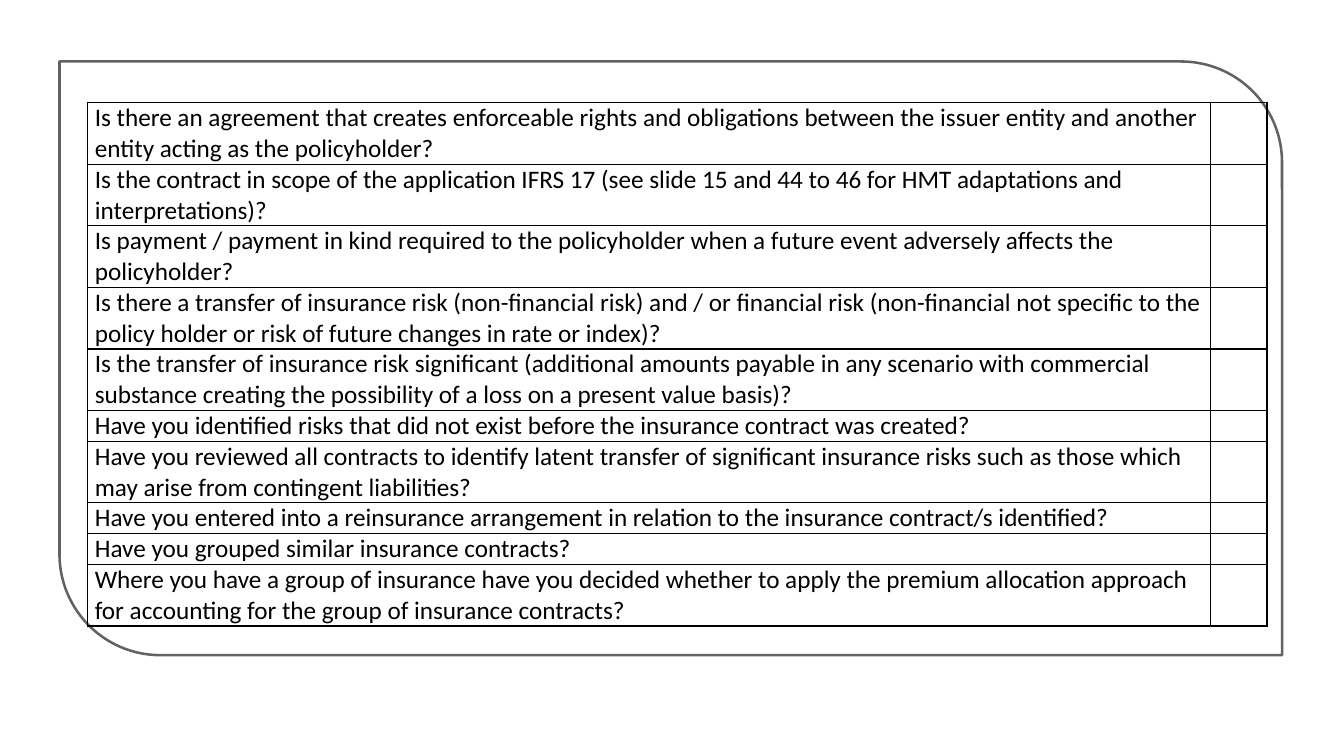
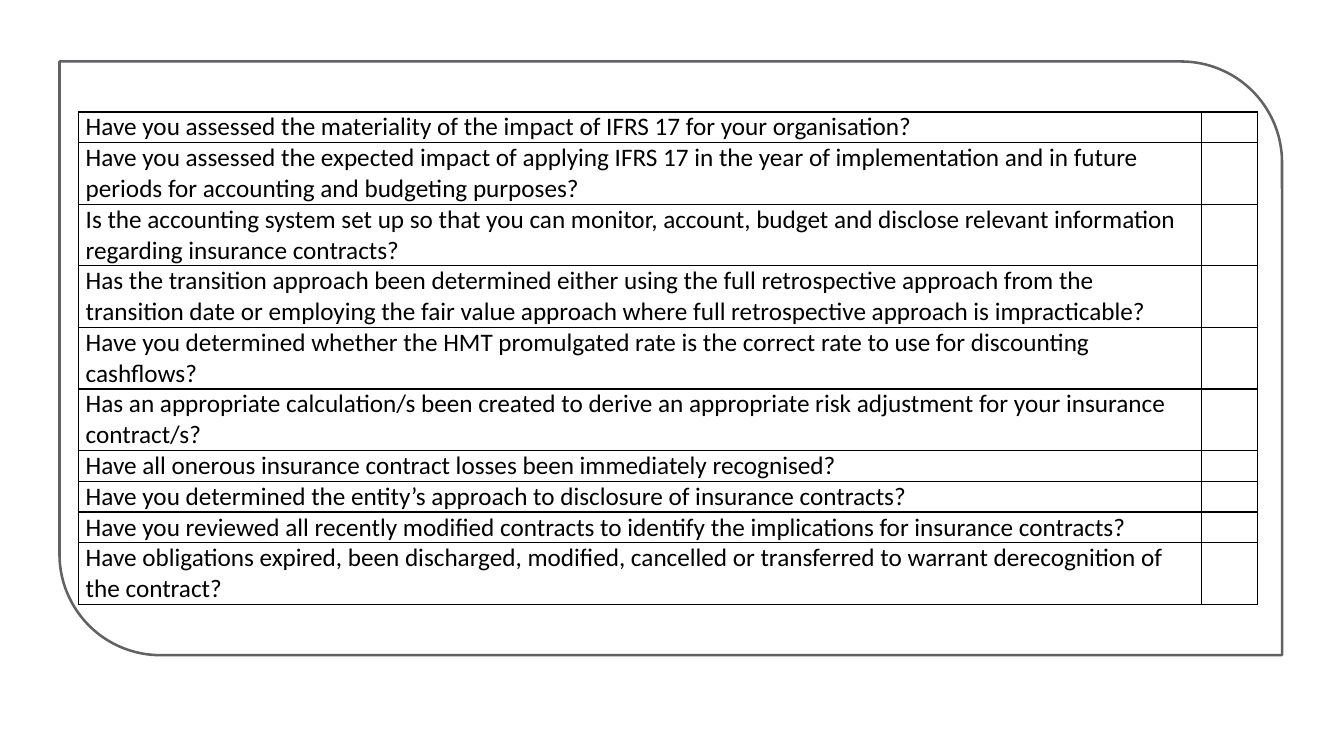
from lxml.etree import SubElement
from pptx import Presentation
from pptx.dml.color import RGBColor
from pptx.enum.shapes import MSO_SHAPE
from pptx.oxml.ns import qn
from pptx.util import Cm, Pt

# Content: table left, table top (cm), questions
LISTS = [
    (2.21, 2.59, [
        "Is there an agreement that creates enforceable rights and obligations between the issuer entity and another entity acting as the policyholder?",
        "Is the contract in scope of the application IFRS 17 (see slide 15 and 44 to 46 for HMT adaptations and interpretations)?",
        "Is payment / payment in kind required to the policyholder when a future event adversely affects the policyholder?",
        "Is there a transfer of insurance risk (non-financial risk) and / or financial risk (non-financial not specific to the policy holder or risk of future changes in rate or index)?",
        "Is the transfer of insurance risk significant (additional amounts payable in any scenario with commercial substance creating the possibility of a loss on a present value basis)?",
        "Have you identified risks that did not exist before the insurance contract was created?",
        "Have you reviewed all contracts to identify latent transfer of significant insurance risks such as those which may arise from contingent liabilities?",
        "Have you entered into a reinsurance arrangement in relation to the insurance contract/s identified?",
        "Have you grouped similar insurance contracts?",
        "Where you have a group of insurance have you decided whether to apply the premium allocation approach for accounting for the group of insurance contracts?",
    ]),
    (1.98, 2.82, [
        "Have you assessed the materiality of the impact of IFRS 17 for your organisation?",
        "Have you assessed the expected impact of applying IFRS 17 in the year of implementation and in future periods for accounting and budgeting purposes?",
        "Is the accounting system set up so that you can monitor, account, budget and disclose relevant information regarding insurance contracts?",
        "Has the transition approach been determined either using the full retrospective approach from the transition date or employing the fair value approach where full retrospective approach is impracticable?",
        "Have you determined whether the HMT promulgated rate is the correct rate to use for discounting cashflows?",
        "Has an appropriate calculation/s been created to derive an appropriate risk adjustment for your insurance contract/s?",
        "Have all onerous insurance contract losses been immediately recognised?",
        "Have you determined the entity’s approach to disclosure of insurance contracts?",
        "Have you reviewed all recently modified contracts to identify the implications for insurance contracts?",
        "Have obligations expired, been discharged, modified, cancelled or transferred to warrant derecognition of the contract?",
    ]),
]

# Shared style
FONT, SIZE = "Calibri", 18
INK, GREY = "000000", "616265"
COLS = (28.3, 1.42)
LINE = 0.77   # height of one text line, cm
FIT = 104     # characters that fit on one line


def color(code):
    return RGBColor.from_string(code)


def add_frame(slide):
    frame = slide.shapes.add_shape(MSO_SHAPE.ROUND_2_DIAG_RECTANGLE,
                                   Cm(1.5), Cm(1.55), Cm(30.81), Cm(14.96))
    frame.adjustments[0], frame.adjustments[1] = 0, 0.17
    frame.shadow.inherit = False
    frame.fill.background()
    frame.line.color.rgb = color(GREY)
    frame.line.width = Pt(1.8)


def style_cell(cell):
    cell.margin_left = cell.margin_right = Cm(0.18)
    cell.margin_top = cell.margin_bottom = 0
    props = cell._tc.get_or_add_tcPr()
    for side in ("lnL", "lnR", "lnT", "lnB"):
        edge = SubElement(props, qn(f"a:{side}"), w=str(Pt(1)))
        fill = SubElement(edge, qn("a:solidFill"))
        SubElement(fill, qn("a:srgbClr"), val=INK)
    cell.fill.background()


def add_list(slide, left, top, items):
    lines = [2 if len(item) > FIT else 1 for item in items]
    table = slide.shapes.add_table(len(items), len(COLS), Cm(left), Cm(top),
                                   Cm(sum(COLS)), Cm(LINE * sum(lines))).table
    table.first_row = table.horz_banding = False
    for col, width in zip(table.columns, COLS):
        col.width = Cm(width)
    for row, item, count in zip(table.rows, items, lines):
        row.height = Cm(LINE * count)
        for cell in row.cells:
            style_cell(cell)
        para = row.cells[0].text_frame.paragraphs[0]
        para.text = item
        font = para.runs[0].font
        font.name, font.size = FONT, Pt(SIZE)
        font.color.rgb = color(INK)


def main():
    deck = Presentation()
    deck.slide_width, deck.slide_height = Cm(33.87), Cm(19.05)
    for left, top, items in LISTS:
        slide = deck.slides.add_slide(deck.slide_layouts[6])
        add_frame(slide)
        add_list(slide, left, top, items)
    deck.save("out.pptx")


if __name__ == "__main__":
    main()
